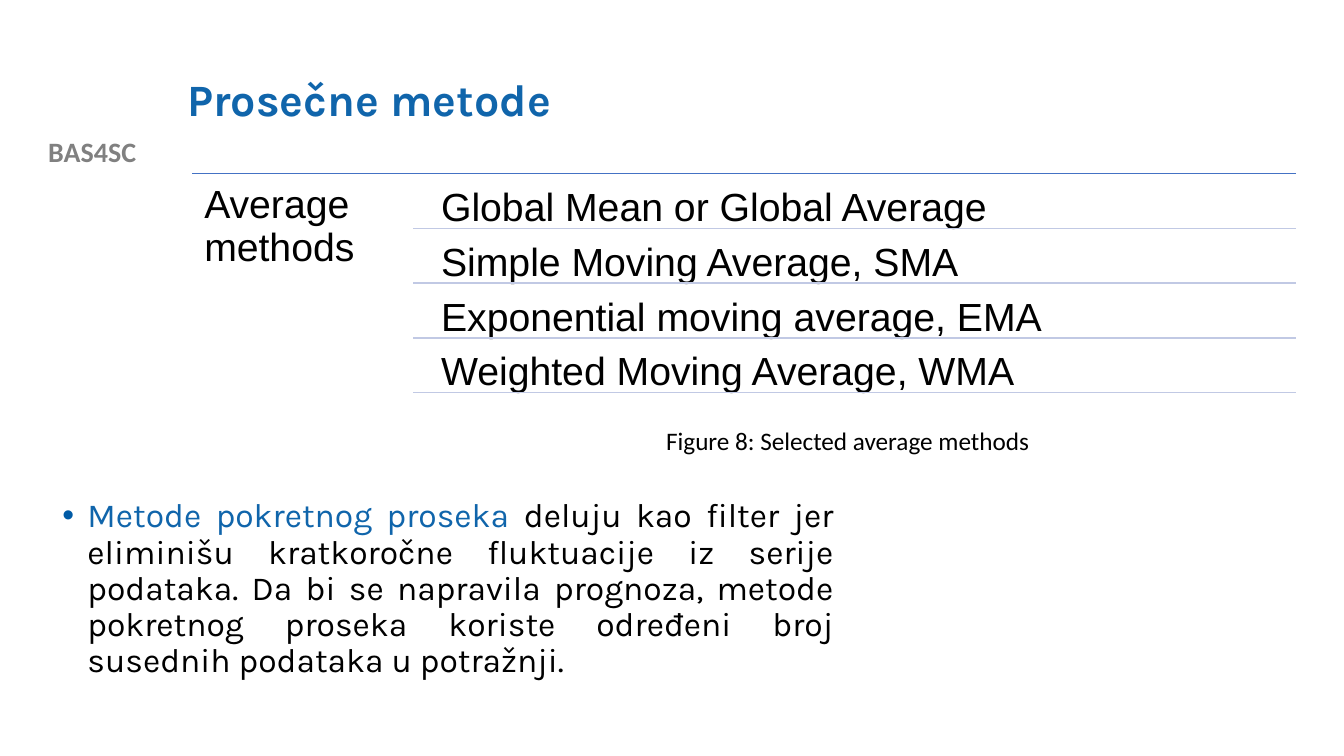
import pptx
import pptx.util
import pptx.dml.color
import pptx.enum.shapes
import pptx.enum.text
import pptx.oxml.ns
import lxml.etree

Pt = pptx.util.Pt
RGBColor = pptx.dml.color.RGBColor
Align = pptx.enum.text.PP_ALIGN
Anchor = pptx.enum.text.MSO_ANCHOR
qn = pptx.oxml.ns.qn

BLUE = RGBColor(0x10, 0x65, 0xAB)
BLACK = RGBColor(0, 0, 0)
GRAY = RGBColor(0x80, 0x80, 0x80)
TOP_RULE = RGBColor(0x44, 0x72, 0xC4)
ROW_RULE = RGBColor(0xC1, 0xC9, 0xE4)
BULLET_COLOR = "015BA6"

PROJECT = "BAS4SC"
TITLE = "Prosečne metode"
GROUP_NAME = "Average methods"
METHODS = [
    "Global Mean or Global Average",
    "Simple Moving Average, SMA",
    "Exponential moving average, EMA",
    "Weighted Moving Average, WMA",
]
CAPTION = "Figure 8: Selected average methods"
BODY = [
    ("Metode pokretnog proseka ", BLUE),
    ("deluju kao filter jer eliminišu kratkoročne fluktuacije iz serije podataka. "
     "Da bi se napravila prognoza, metode pokretnog proseka koriste određeni broj "
     "susednih podataka u potražnji.", BLACK),
]

LIST_LEFT, LIST_RIGHT, LIST_TOP = 137.5, 925.9, 123.8
RULE_LEFT, METHOD_LEFT = 295.2, 306.7
ROW_STEP, ROW_HEIGHT, ROW_GAP = 39.1, 37.4, 2
LIST_INSET = 8.4

presentation = pptx.Presentation()
presentation.slide_width = Pt(960)
presentation.slide_height = Pt(540)
slide = presentation.slides.add_slide(presentation.slide_layouts[6])


def add_text(box, runs, font, size, bold=False, align=Align.LEFT,
             anchor=Anchor.TOP, spacing=None, inset=None):
    shape = slide.shapes.add_textbox(*map(Pt, box))
    frame = shape.text_frame
    frame.word_wrap = True
    frame.vertical_anchor = anchor
    if inset is not None:
        frame.margin_left = frame.margin_right = Pt(inset)
        frame.margin_top = frame.margin_bottom = Pt(inset)
    paragraph = frame.paragraphs[0]
    paragraph.alignment = align
    if spacing:
        paragraph.line_spacing = spacing
    for text, color in runs:
        run = paragraph.add_run()
        run.text = text
        run.font.name = font
        run.font.size = Pt(size)
        run.font.bold = bold
        run.font.color.rgb = color
    return paragraph


def add_rule(left, top, color):
    rule = slide.shapes.add_connector(
        pptx.enum.shapes.MSO_CONNECTOR.STRAIGHT,
        Pt(left), Pt(top), Pt(LIST_RIGHT), Pt(top))
    rule.line.color.rgb = color
    rule.line.width = Pt(1)
    lxml.etree.SubElement(rule._element.spPr, qn("a:effectLst"))


def add_bullet(paragraph, indent):
    properties = paragraph._p.get_or_add_pPr()
    properties.set("marL", str(Pt(indent)))
    properties.set("indent", str(-Pt(indent)))
    color = lxml.etree.SubElement(properties, qn("a:buClr"))
    lxml.etree.SubElement(color, qn("a:srgbClr"), val=BULLET_COLOR)
    lxml.etree.SubElement(properties, qn("a:buFont"), typeface="Arial")
    lxml.etree.SubElement(properties, qn("a:buChar"), char="•")


add_text((0, 92.2, 131.8, 31.7), [(PROJECT, GRAY)], "Calibri", 20,
         bold=True, align=Align.CENTER)
add_text((126.7, 28.8, 767.5, 87.8), [(TITLE, BLUE)], "Karla", 32,
         bold=True, anchor=Anchor.MIDDLE, spacing=0.9)
body = add_text((37.4, 352.8, 565.2, 158.4), BODY, "Karla", 24,
                align=Align.JUSTIFY, spacing=0.9)
add_bullet(body, 18)

add_rule(LIST_LEFT, LIST_TOP, TOP_RULE)
add_text((LIST_LEFT, LIST_TOP, RULE_LEFT - LIST_LEFT, 158.4),
         [(GROUP_NAME, BLACK)], "Arial", 28, spacing=0.9, inset=LIST_INSET)
for index, method in enumerate(METHODS):
    row_top = LIST_TOP + ROW_GAP + index * ROW_STEP
    add_text((METHOD_LEFT, row_top, LIST_RIGHT - METHOD_LEFT, ROW_HEIGHT),
             [(method, BLACK)], "Arial", 28, spacing=0.9, inset=LIST_INSET)
    add_rule(RULE_LEFT, row_top + ROW_HEIGHT, ROW_RULE)

add_text((468.7, 300.2, 457.2, 28.8), [(CAPTION, BLACK)], "Calibri", 18)

presentation.save("out.pptx")
